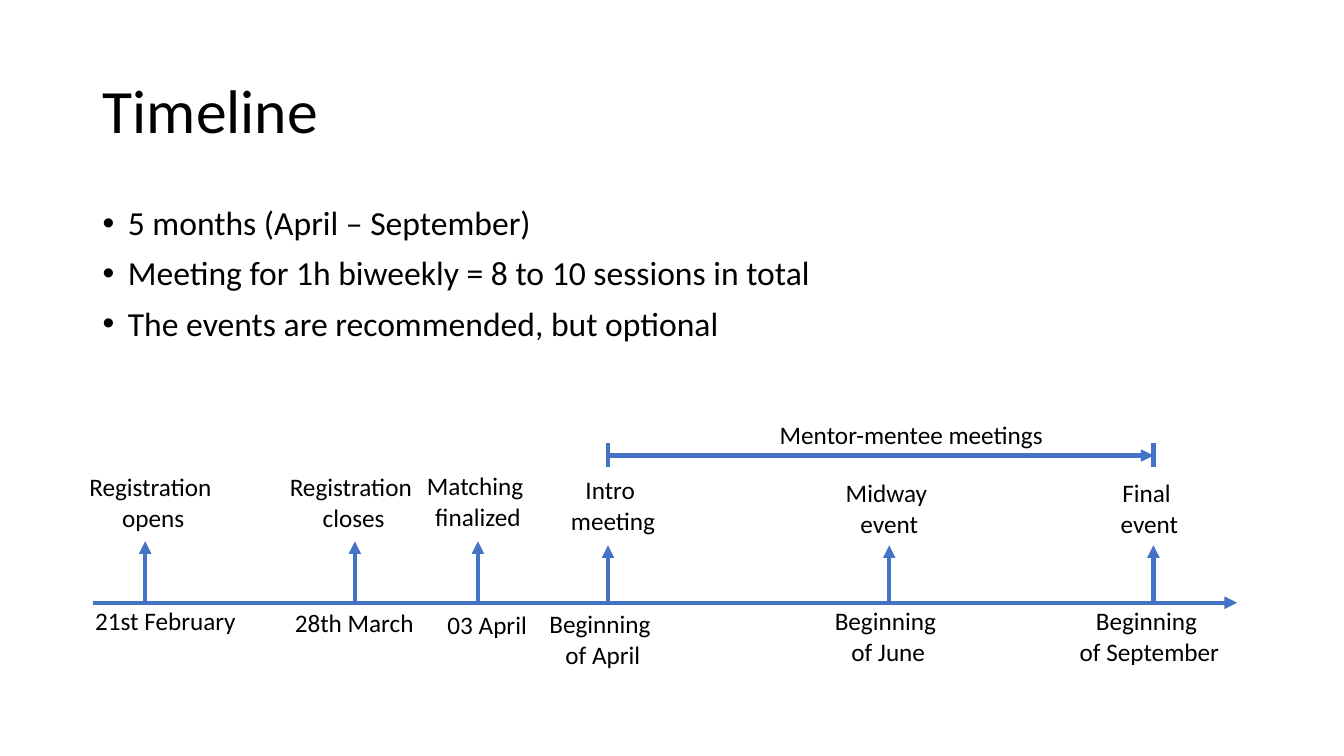
"""Build a mentoring programme timeline slide."""
from dataclasses import dataclass

from lxml import etree
from pptx import Presentation
from pptx.dml.color import RGBColor
from pptx.enum.shapes import MSO_CONNECTOR
from pptx.enum.text import MSO_ANCHOR, MSO_AUTO_SIZE, PP_ALIGN
from pptx.oxml.ns import qn
from pptx.util import Inches, Pt

STRAIGHT = MSO_CONNECTOR.STRAIGHT
MIDDLE = MSO_ANCHOR.MIDDLE
FIT_SHAPE = MSO_AUTO_SIZE.SHAPE_TO_FIT_TEXT
FIT_NONE = MSO_AUTO_SIZE.NONE
LEFT, CENTER = PP_ALIGN.LEFT, PP_ALIGN.CENTER


@dataclass(frozen=True)
class Theme:
    font: str = "Calibri"
    ink: RGBColor = RGBColor(0x00, 0x00, 0x00)
    accent: RGBColor = RGBColor(0x44, 0x72, 0xC4)
    title_size: int = 44
    bullet_size: int = 24
    label_size: int = 18
    line_width: int = 3


@dataclass(frozen=True)
class Label:
    text: str
    center: float
    top: float
    width: float


@dataclass(frozen=True)
class Event:
    x: float
    arrow_tip: float
    name: Label
    date: Label


AXIS_Y = 5.98
SPAN_Y = 4.52
INTRO_X, FINAL_X = 6.03, 11.44
SPAN_LABEL = Label("Mentor-mentee meetings", 9.1, 4.11, 2.93)
BULLETS = [
    "5 months (April – September)",
    "Meeting for 1h biweekly = 8 to 10 sessions in total",
    "The events are recommended, but optional",
]
EVENTS = [
    Event(1.44, 5.37, Label("Registration \nopens", 1.52, 4.63, 1.48),
          Label("21st February", 1.65, 5.96, 1.61)),
    Event(3.52, 5.37, Label("Registration\n closes", 3.48, 4.63, 1.43),
          Label("28th March", 3.52, 5.98, 1.39)),
    Event(4.74, 5.37, Label("Matching \nfinalized", 4.74, 4.62, 1.23),
          Label("03 April", 4.84, 6, 1)),
    Event(INTRO_X, 5.41, Label("Intro \nmeeting", 6.08, 4.66, 1.05),
          Label("Beginning \nof April", 5.98, 5.99, 1.26)),
    Event(8.82, 5.41, Label("Midway \nevent", 8.82, 4.69, 1.07),
          Label("Beginning \nof June", 8.81, 5.96, 1.26)),
    Event(FINAL_X, 5.41, Label("Final \nevent", 11.4, 4.69, 0.78),
          Label("Beginning \nof September", 11.4, 5.96, 1.6)),
]


class TimelineSlide:
    def __init__(self, slide, theme):
        self.slide = slide
        self.theme = theme

    def style(self, frame, size, align):
        for paragraph in frame.paragraphs:
            paragraph.alignment = align
            for run in paragraph.runs:
                run.font.name = self.theme.font
                run.font.size = Pt(size)
                run.font.color.rgb = self.theme.ink

    def title(self, text):
        heading = self.slide.shapes.title
        heading.left, heading.top = Inches(0.92), Inches(0.4)
        heading.width, heading.height = Inches(11.5), Inches(1.45)
        frame = heading.text_frame
        frame.text = text
        frame.vertical_anchor = MIDDLE
        frame.auto_size = FIT_NONE
        frame.paragraphs[0].line_spacing = 0.9
        self.style(frame, self.theme.title_size, LEFT)

    def bullets(self, items):
        frame = self.slide.shapes.add_textbox(
            Inches(0.92), Inches(2), Inches(11.5), Inches(1.7)).text_frame
        frame.word_wrap = True
        frame.text = "\n".join(items)
        self.style(frame, self.theme.bullet_size, LEFT)
        for paragraph in frame.paragraphs:
            paragraph.line_spacing = 0.9
            paragraph.space_before = Pt(10)
            properties = paragraph._p.get_or_add_pPr()
            properties.set("marL", str(Inches(0.25)))
            properties.set("indent", str(Inches(-0.25)))
            etree.SubElement(properties, qn("a:buFont"), typeface="Arial")
            etree.SubElement(properties, qn("a:buChar"), char="•")

    def label(self, label):
        lines = label.text.count("\n") + 1
        frame = self.slide.shapes.add_textbox(
            Inches(label.center - label.width / 2), Inches(label.top),
            Inches(label.width), Inches(0.1 + 0.3 * lines)).text_frame
        frame.word_wrap = False
        frame.auto_size = FIT_SHAPE
        frame.text = label.text
        self.style(frame, self.theme.label_size, CENTER if lines > 1 else LEFT)

    def line(self, x1, y1, x2, y2, arrow=True):
        connector = self.slide.shapes.add_connector(
            STRAIGHT, Inches(x1), Inches(y1), Inches(x2), Inches(y2))
        connector.line.color.rgb = self.theme.accent
        connector.line.width = Pt(self.theme.line_width)
        if arrow:
            etree.SubElement(connector.line._get_or_add_ln(),
                             qn("a:tailEnd"), type="triangle")
        etree.SubElement(connector._element.spPr, qn("a:effectLst"))

    def event(self, event):
        self.line(event.x, AXIS_Y, event.x, event.arrow_tip)
        self.label(event.date)
        self.label(event.name)

    def meeting_span(self):
        self.line(INTRO_X, SPAN_Y, FINAL_X, SPAN_Y)
        self.label(SPAN_LABEL)
        for x in (INTRO_X, FINAL_X):
            self.line(x, SPAN_Y - 0.12, x, SPAN_Y + 0.11, arrow=False)


def main():
    deck = Presentation()
    deck.slide_width, deck.slide_height = Inches(13.33), Inches(7.5)
    title_only = deck.slide_layouts[5]
    timeline = TimelineSlide(deck.slides.add_slide(title_only), Theme())
    timeline.title("Timeline")
    timeline.bullets(BULLETS)
    timeline.line(0.92, AXIS_Y, 12.27, AXIS_Y)
    for event in EVENTS:
        timeline.event(event)
    timeline.meeting_span()
    deck.save("out.pptx")


if __name__ == "__main__":
    main()
